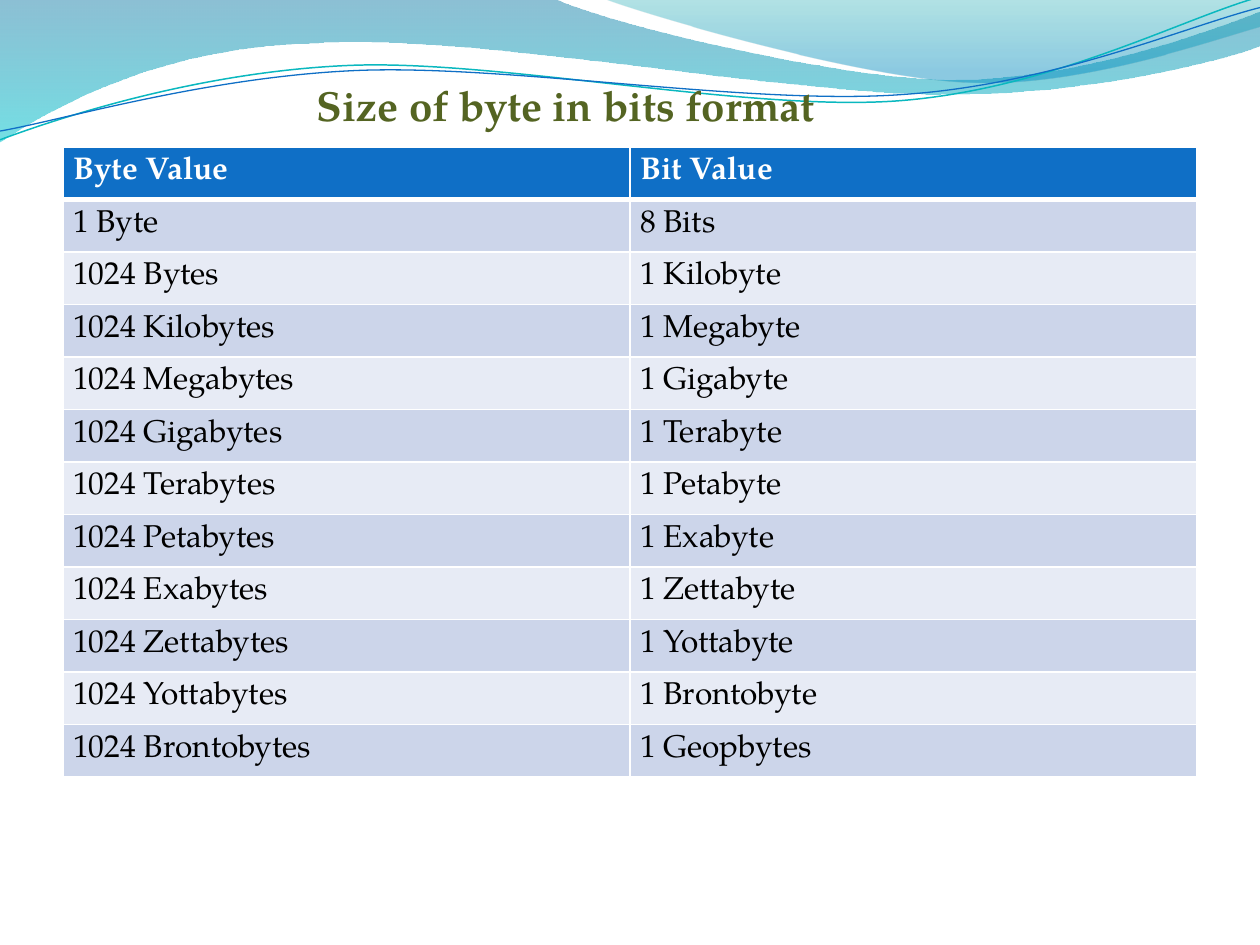
import math

from lxml import etree
from pptx import Presentation
from pptx.dml.color import RGBColor
from pptx.oxml import ns
from pptx.util import Pt

FONT = "TeX Gyre Pagella"
UNITS = ["Byte", "Kilobyte", "Megabyte", "Gigabyte", "Terabyte", "Petabyte",
         "Exabyte", "Zettabyte", "Yottabyte", "Brontobyte", "Geopbytes"]


def color(code):
    """Turn a hex string into a colour."""
    return RGBColor.from_string(code)


def node(up, tag, **attrs):
    """Add a drawing element below another one."""
    return etree.SubElement(up, ns.qn("a:" + tag),
                            {key: str(val) for key, val in attrs.items()})


def outline(slide, box, start, parts, turn=0, close=False):
    """Draw lines (two numbers) and curves (six) in a box turned by degrees."""
    left, top, width, height = box
    right, base = left + width, top + height
    pen = slide.shapes.build_freeform(Pt(left), Pt(top))
    pen.add_line_segments([(Pt(right), Pt(base))], close=close)
    shape = pen.convert_to_shape()
    shape.shadow.inherit = False
    shape.rotation = turn
    route = shape.element.spPr.find(".//" + ns.qn("a:path"))
    for kid in list(route):
        route.remove(kid)
    cos, sin = math.cos(math.radians(turn)), math.sin(math.radians(turn))
    for i, part in enumerate([start, *parts]):
        tag = "moveTo" if i == 0 else "lnTo" if len(part) == 2 else "cubicBezTo"
        step = node(route, tag)
        for x, y in zip(part[::2], part[1::2]):
            dx, dy = x - (left + right) / 2, y - (top + base) / 2
            node(step, "pt", x=Pt(width / 2 + dx * cos + dy * sin),
                 y=Pt(height / 2 - dx * sin + dy * cos))
    if close:
        node(route, "close")
    return shape


def wave(slide, box, start, parts, stops):
    """Draw a closed wave with a see-through downward gradient."""
    shape = outline(slide, box, start, parts, close=True)
    shape.line.fill.background()
    shape.fill.gradient()
    grad = shape.element.spPr.find(ns.qn("a:gradFill"))
    for kid in list(grad):
        grad.remove(kid)
    group = node(grad, "gsLst")
    for pos, code, alpha in stops:
        stop = node(group, "gs", pos=pos * 1000)
        node(node(stop, "srgbClr", val=code), "alpha", val=alpha * 1000)
    node(grad, "lin", ang=5400000, scaled=0)


def strand(slide, box, start, parts, code, width):
    """Draw an open curved line."""
    shape = outline(slide, box, start, parts, turn=357.3)
    shape.fill.background()
    shape.line.color.rgb = color(code)
    shape.line.width = Pt(width)


def style(frame, size, code, bold):
    """Format the only run of a text frame."""
    font = frame.paragraphs[0].runs[0].font
    font.name, font.size, font.bold = FONT, Pt(size), bold
    font.color.rgb = color(code)


def border(cell, base):
    """Give a cell white borders, with its own bottom width."""
    props = cell._tc.get_or_add_tcPr()
    for side, width in (("lnL", 1), ("lnR", 1), ("lnT", 1), ("lnB", base)):
        line = node(props, side, w=Pt(width))
        node(node(line, "solidFill"), "srgbClr", val="FFFFFF")


def grid(slide, rows):
    """Add the table of byte and bit values."""
    table = slide.shapes.add_table(len(rows), 2, Pt(36), Pt(84),
                                   Pt(648), Pt(30 * len(rows))).table
    for r, row in enumerate(rows):
        head = r == 0
        for c, word in enumerate(row):
            cell = table.cell(r, c)
            cell.margin_left = cell.margin_right = Pt(5.76)
            cell.margin_top = cell.margin_bottom = Pt(5.76)
            cell.text_frame.text = word
            style(cell.text_frame, 18, "FFFFFF" if head else "000000", head)
            border(cell, 3 if head else 1)
            cell.fill.solid()
            fill = "0F6FC6" if head else ("E7EBF5", "CCD5EA")[r % 2]
            cell.fill.fore_color.rgb = color(fill)


def title(slide, words):
    """Add the heading."""
    box = slide.shapes.add_textbox(Pt(174), Pt(41.76), Pt(324), Pt(36))
    box.text_frame.word_wrap = True
    box.text_frame.text = words
    style(box.text_frame, 24, "546422", True)


def main():
    """Build and save the slide."""
    deck = Presentation()
    deck.slide_width, deck.slide_height = Pt(720), Pt(540)
    slide = deck.slides.add_slide(deck.slide_layouts[6])
    wave(slide, (-0.7, -0.7, 721.4, 82.1), (0, 0), [
        (316.8, -0.7), (342.7, 12.2, 478.1, 45.4, 545.8, 45.4),
        (614.2, 45.4, 689.8, 18.7, 720, 6.5), (720.7, 25.9),
        (707.8, 31.7, 626.4, 54.7, 537.1, 54),
        (447.8, 54, 275, 20.2, 185, 24.5),
        (92.9, 25.9, 33.1, 59.8, -0.7, 81.4), (0, 0)],
        [(0, "0074A1", 45), (100, "00C6CF", 55)])
    wave(slide, (344.9, -0.7, 375.1, 50.4), (344.9, -0.7), [
        (366.5, 7.9, 491, 44.6, 553.7, 46.8),
        (616.3, 49.7, 691.9, 23, 720, 15.1), (720, 0), (344.9, -0.7)],
        [(0, "00A1A9", 30), (80, "008BBF", 45), (100, "008BBF", 45)])
    strand(slide, (-1.4, 15.8, 721.4, 51.1), (0, 79.9), [
        (34.6, 67, 113.8, 41, 199.4, 37.4),
        (284.4, 33.8, 427, 64.1, 513.4, 57.6),
        (599.8, 51.1, 675.4, 10.8, 718.6, -1.4)], "0AB8BF", 0.85)
    strand(slide, (-1.4, 21.6, 722.2, 41.8), (0, 74.9), [
        (33.8, 69.1, 118.1, 43.9, 203.8, 40.3),
        (290.2, 36.7, 429.8, 60.5, 516.2, 54),
        (601.9, 48.2, 677.5, 15.1, 720, 4.3)], "0F6FC6", 0.75)
    pairs = [(f"1024 {low}s", f"1 {high}") for low, high in zip(UNITS, UNITS[1:])]
    grid(slide, [("Byte Value", "Bit Value"), ("1 Byte", "8 Bits"), *pairs])
    title(slide, "Size of byte in bits format")
    deck.save("out.pptx")


if __name__ == "__main__":
    main()
